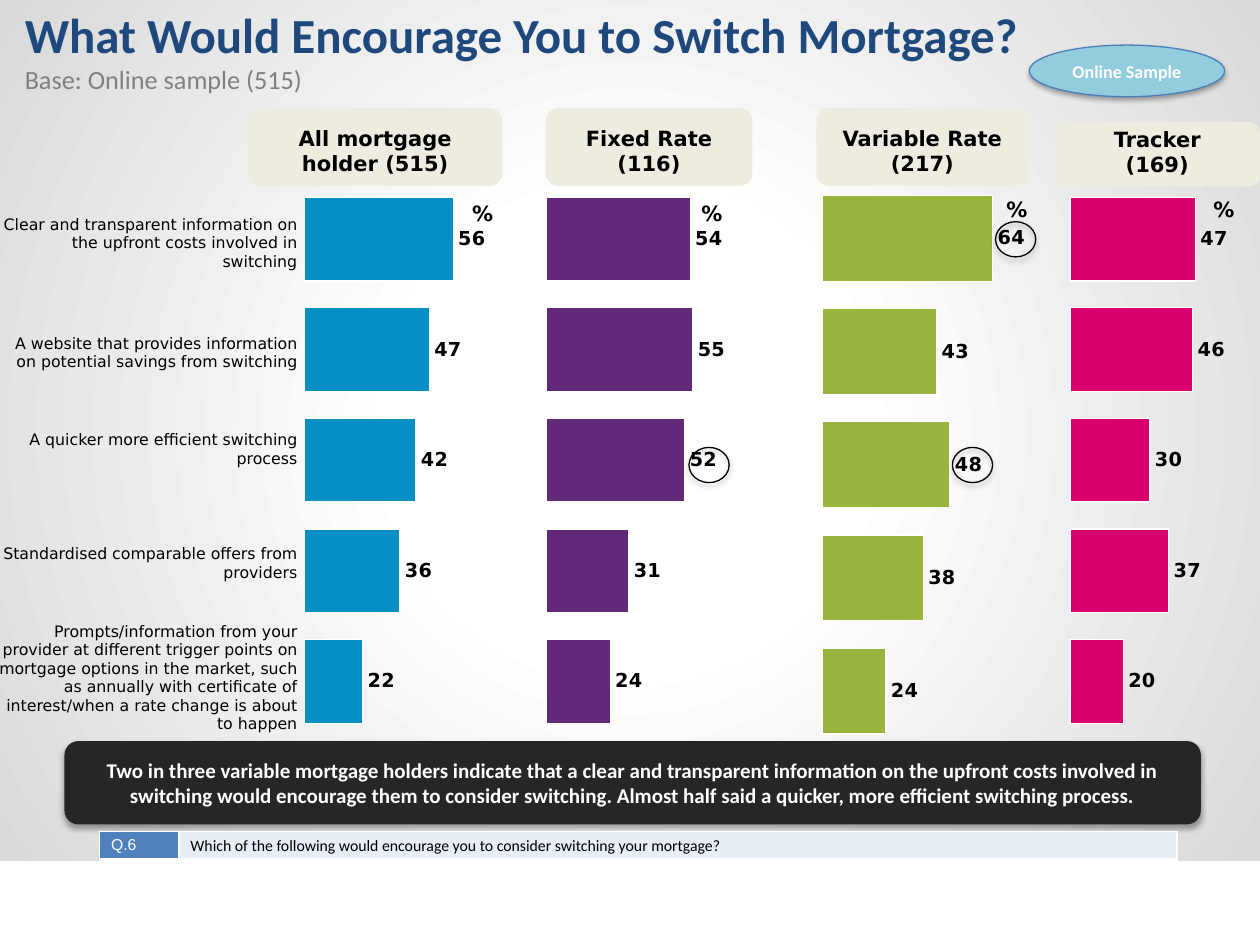
"""Build the slide on what would encourage mortgage holders to switch."""
from pptx import Presentation, util as u
from pptx.chart import data
from pptx.dml import color
from pptx.enum import chart as charts, shapes, text
from pptx.oxml import ns, parse_xml

SHAPE = shapes.MSO_SHAPE
ALIGN = text.PP_ALIGN
ANCHOR = text.MSO_ANCHOR
PLAIN = "{2D5ABB26-0587-4C30-8999-92F81FD0307C}"


def tint(code):
    return color.RGBColor.from_string(code)


def put(item, vals):
    for key, val in vals.items():
        setattr(item, key, val)


def node(body):
    tag, rest = body.split(" ", 1)
    return parse_xml(f"<{tag} {ns.nsdecls('a', 'c')} {rest}")


def font(size, name="DejaVu Sans", ink="000000", bold=False):
    return {"size": u.Pt(size), "name": name, "bold": bold, "ink": ink}


class Deck:
    def __init__(self):
        self.prs = Presentation()
        put(self.prs, {"slide_width": u.Cm(25.4), "slide_height": u.Cm(19.05)})
        self.slide = self.prs.slides.add_slide(self.prs.slide_layouts[6])
        self.strong = font(12, bold=True)
        self.label = font(11, bold=True)
        self.small = font(9)

    def box(self, *sizes):
        return [u.Cm(size) for size in sizes]

    def style(self, item, form):
        put(item, {key: val for key, val in form.items() if key != "ink"})
        item.color.rgb = tint(form["ink"])

    def words(self, frame, lines, form, align=ALIGN.CENTER):
        for num, line in enumerate(lines):
            para = frame.add_paragraph() if num else frame.paragraphs[0]
            para.alignment = align
            run = para.add_run()
            run.text = line
            self.style(run.font, form)

    def shade(self, place):
        item = self.slide.shapes.add_shape(SHAPE.RECTANGLE, *self.box(*place))
        item.shadow.inherit = False
        item.line.fill.background()
        item.fill.background()
        props = item._element.spPr
        props.replace(props.find(ns.qn("a:noFill")), node(
            'a:gradFill rotWithShape="1"><a:gsLst>'
            '<a:gs pos="30000"><a:srgbClr val="FFFFFF"/></a:gs>'
            '<a:gs pos="100000"><a:srgbClr val="D9D9D9"/></a:gs></a:gsLst>'
            '<a:path path="circle"><a:fillToRect l="50000" t="50000" r="50000" b="50000"/>'
            '</a:path></a:gradFill>'))

    def title(self, place, parts):
        frame = self.slide.shapes.add_textbox(*self.box(*place)).text_frame
        put(frame, {"word_wrap": True, "vertical_anchor": ANCHOR.BOTTOM})
        para = frame.paragraphs[0]
        for num, (line, form) in enumerate(parts):
            if num:
                para.add_line_break()
            run = para.add_run()
            run.text = line
            self.style(run.font, form)

    def note(self, place, line):
        frame = self.slide.shapes.add_textbox(*self.box(*place)).text_frame
        frame.word_wrap = False
        self.words(frame, [line], self.strong)

    def shape(self, kind, place, fill=None, line=None, glow=False,
              lines=(), form=None, anchor=ANCHOR.MIDDLE):
        item = self.slide.shapes.add_shape(kind, *self.box(*place))
        item.shadow.inherit = False
        if fill:
            item.fill.solid()
            item.fill.fore_color.rgb = tint(fill)
        else:
            item.fill.background()
        if line:
            item.line.color.rgb = tint(line)
            item.line.width = u.Pt(0.75)
        else:
            item.line.fill.background()
        if glow:
            item._element.spPr.find(ns.qn("a:effectLst")).append(node(
                'a:outerShdw blurRad="40000" dist="23000" dir="5400000" rotWithShape="0">'
                '<a:srgbClr val="000000"><a:alpha val="35000"/></a:srgbClr></a:outerShdw>'))
        item.text_frame.vertical_anchor = anchor
        self.words(item.text_frame, lines, form)

    def chart(self, place, vals, fill, plot):
        info = data.CategoryChartData(number_format="0")
        info.categories = [str(num + 1) for num in range(len(vals))]
        info.add_series("Series 1", vals)
        chart = self.slide.shapes.add_chart(
            charts.XL_CHART_TYPE.BAR_CLUSTERED, *self.box(*place), info).chart
        put(chart, {"has_legend": False, "has_title": False})
        self.style(chart.font, font(18, "Calibri"))
        put(chart.category_axis, {"reverse_order": True, "visible": False})
        put(chart.value_axis, {"minimum_scale": 0, "maximum_scale": 100,
                               "has_major_gridlines": False, "visible": False})
        bars = chart.plots[0]
        put(bars, {"gap_width": 32, "vary_by_categories": False, "has_data_labels": True})
        put(bars.data_labels, {"show_value": True, "number_format": "0",
                               "number_format_is_linked": False,
                               "position": charts.XL_LABEL_POSITION.OUTSIDE_END})
        self.style(bars.data_labels.font, self.label)
        look = bars.series[0].format
        look.fill.solid()
        look.fill.fore_color.rgb = tint(fill)
        look.line.color.rgb = tint("FFFFFF")
        look.line.width = u.Pt(0.75)
        area = chart._chartSpace.chart.plotArea
        for old in area.findall(ns.qn("c:layout")):
            area.remove(old)
        spots = "".join(f'<c:{key} val="{val}"/>' for key, val in zip("xywh", plot))
        area.insert(0, node(
            'c:layout ><c:manualLayout><c:layoutTarget val="inner"/>'
            f'<c:xMode val="edge"/><c:yMode val="edge"/>{spots}</c:manualLayout></c:layout>'))

    def table(self, left, top, cols, rows):
        item = self.slide.shapes.add_table(
            len(rows), len(cols), *self.box(left, top, sum(cols), sum(rows)))
        item._element.find(".//" + ns.qn("a:tableStyleId")).text = PLAIN
        grid = item.table
        put(grid, {"first_row": False, "horz_banding": False})
        for col, wide in zip(grid.columns, cols):
            col.width = u.Cm(wide)
        for row, high in zip(grid.rows, rows):
            row.height = u.Cm(high)
        return grid

    def cell(self, cell, line, form, align, pads, fill=None):
        sides = ("left", "top", "right", "bottom")
        put(cell, {f"margin_{side}": u.Cm(pad) for side, pad in zip(sides, pads)})
        self.words(cell.text_frame, [line], form, align)
        if not fill:
            cell.fill.background()
            return
        props = cell._tc.get_or_add_tcPr()
        for side, wide in zip("LRTB", (1, 1, 1, 3)):
            props.append(node(f'a:ln{side} w="{u.Pt(wide)}"><a:solidFill>'
                              f'<a:srgbClr val="FFFFFF"/></a:solidFill></a:ln{side}>'))
        cell.fill.solid()
        cell.fill.fore_color.rgb = tint(fill)


def main():
    deck = Deck()
    deck.shade((0, 0, 25.4, 17.35))
    deck.title((0.25, 0.33, 24.94, 1.7), [
        ("What Would Encourage You to Switch Mortgage?", font(28, "Calibri", "1F497D", True)),
        ("Base: Online sample (515)", font(15, "Calibri", "808080"))])

    reasons = [
        ("Clear and transparent information on the upfront costs involved in switching", 2.03, 0.03),
        ("A website that provides information on potential savings from switching", 2.31, 0.4),
        ("A quicker more efficient switching process", 1.93, 0.03),
        ("Standardised comparable offers from providers", 1.93, 0.4),
        ("Prompts/information from your provider at different trigger points on mortgage options "
         "in the market, such as annually with certificate of interest/when a rate change is "
         "about to happen", 2.59, 0.03)]
    grid = deck.table(-0.13, 4.32, [6.15], [high for _, high, _ in reasons])
    for num, (line, _, pad) in enumerate(reasons):
        deck.cell(grid.cell(num, 0), line, deck.small, ALIGN.RIGHT, (0.03, pad, 0.03, 0))

    groups = [
        ((6.12, 3.35, 5.49, 11.86), (56, 47, 42, 36, 22), "068FC4", (0, 0.03),
         (5, 2.18, 5.13, 1.57), ["All mortgage holder (515)"], (9.27, 3.91)),
        ((10.9, 3.35, 5.49, 11.86), (54, 55, 52, 31, 24), "62297B", (0.02, 0.03),
         (11, 2.18, 4.17, 1.57), ["Fixed Rate", "(116)"], (13.89, 3.91)),
        ((16.46, 3.3, 5.49, 12.14), (64, 43, 48, 38, 24), "99B43C", (0.02, 0.03),
         (16.46, 2.18, 4.27, 1.57), ["Variable Rate", "(217)"], (20.04, 3.84)),
        ((21.46, 3.35, 5.49, 11.86), (47, 46, 30, 37, 20), "D9006F", (0.02, 0.03),
         (21.26, 2.46, 4.14, 1.3), ["Tracker", "(169)"], (24.21, 3.84))]
    for place, vals, fill, start, *_ in groups:
        deck.chart(place, vals, fill, (*start, 0.98, 0.94))
    for *_, place, lines, spot in groups:
        deck.shape(SHAPE.ROUNDED_RECTANGLE, place, "EEECE1", lines=lines,
                   form=deck.strong, anchor=ANCHOR.BOTTOM)
        deck.note((*spot, 0.86, 0.76), "%")

    deck.shape(SHAPE.ROUNDED_RECTANGLE, (1.3, 14.94, 22.91, 1.68), "262626", glow=True, lines=[
        "Two in three variable mortgage holders indicate that a clear and transparent information "
        "on the upfront costs involved in switching would encourage them to consider switching. "
        "Almost half said a quicker, more efficient switching process."],
        form=font(12, "Calibri", "FFFFFF", True))
    for spot in ((20.07, 4.47), (19.2, 9.02), (13.89, 9.02)):
        deck.shape(SHAPE.OVAL, (*spot, 0.81, 0.71), line="000000", glow=True)

    grid = deck.table(2.01, 16.76, [1.6, 20.12], [0.58])
    asked = [("Q.6", font(9, "Arial", "FFFFFF"), "4F81BD"),
             ("Which of the following would encourage you to consider switching your mortgage?",
              font(9, "Calibri"), "E7EEF5")]
    for num, (line, form, fill) in enumerate(asked):
        deck.cell(grid.cell(0, num), line, form, ALIGN.LEFT, (0.23, 0.1, 0.23, 0.1), fill)
    deck.shape(SHAPE.OVAL, (20.75, 0.91, 3.94, 1.04), "93CDDD", "4B7EBC", True,
               ["Online Sample"], font(10.3, "Calibri", "FFFFFF", True))
    deck.prs.save("out.pptx")


if __name__ == "__main__":
    main()
